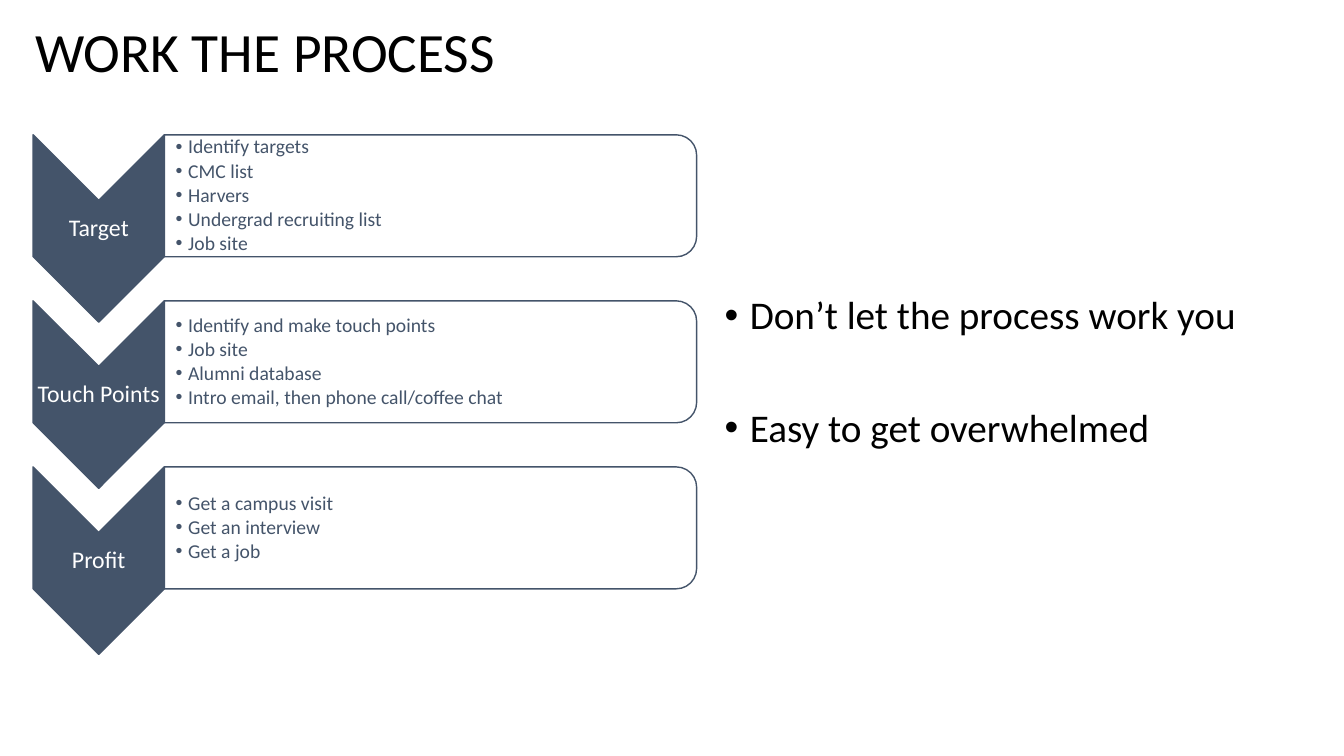
import lxml.etree
import pptx
import pptx.dml.color
import pptx.enum.shapes
import pptx.enum.text
import pptx.oxml.ns
import pptx.util

Pt = pptx.util.Pt
SHAPE = pptx.enum.shapes.MSO_SHAPE
ALIGN = pptx.enum.text.PP_ALIGN
SLATE, WHITE, BLACK = "44546A", "FFFFFF", "000000"
TOP, STEP = 96.3, 118.6

STEPS = [
    ("Target", ["Identify targets", "CMC list", "Harvers",
                "Undergrad recruiting list", "Job site"]),
    ("Touch Points", ["Identify and make touch points", "Job site", "Alumni database",
                      "Intro email, then phone call/coffee chat"]),
    ("Profit", ["Get a campus visit", "Get an interview", "Get a job"]),
]


def set_color(fmt, color):
    fmt.rgb = pptx.dml.color.RGBColor.from_string(color)


def add_bullet(p, indent):
    pPr = p._p.get_or_add_pPr()
    pPr.set("marL", str(Pt(indent)))
    pPr.set("indent", str(-Pt(indent)))
    for tag, name, value in (("buFont", "typeface", "Arial"), ("buChar", "char", "•")):
        lxml.etree.SubElement(pPr, pptx.oxml.ns.qn("a:" + tag)).set(name, value)


def write(tf, lines, size, color, indent=0, insets=(7.2, 3.6, 7.2, 3.6), **spacing):
    """Fill a text frame with one paragraph per line, bulleted if indented."""
    sides = ("margin_left", "margin_top", "margin_right", "margin_bottom")
    frame = dict(zip(sides, map(Pt, insets)), word_wrap=True,
                 auto_size=pptx.enum.text.MSO_AUTO_SIZE.NONE,
                 vertical_anchor=pptx.enum.text.MSO_ANCHOR.MIDDLE)
    for name, value in frame.items():
        setattr(tf, name, value)
    for i, line in enumerate(lines):
        p = tf.paragraphs[0] if i == 0 else tf.add_paragraph()
        for name, value in dict({"alignment": ALIGN.LEFT, "line_spacing": 0.9}, **spacing).items():
            setattr(p, name, value)
        if indent:
            add_bullet(p, indent)
        r = p.add_run()
        r.text = line
        for name, value in {"size": Pt(size), "name": "Calibri"}.items():
            setattr(r.font, name, value)
        set_color(r.font.color, color)


def add_text(s, box, lines, size, color, **options):
    write(s.shapes.add_textbox(*map(Pt, box)).text_frame, lines, size, color, **options)


def add_turned_shape(s, kind, box, fill):
    """Add a shape turned by 90 degrees that covers the given box."""
    x, y, w, h = box
    sp = s.shapes.add_shape(kind, Pt(x + (w - h) / 2), Pt(y + (h - w) / 2), Pt(h), Pt(w))
    sp.rotation = 90
    sp.shadow.inherit = False
    sp.fill.solid()
    set_color(sp.fill.fore_color, fill)
    set_color(sp.line.color, SLATE)
    sp.line.width = Pt(1)


def add_step(s, y, label, items):
    add_turned_shape(s, SHAPE.CHEVRON, (23.6, y, 93.8, 133.9), SLATE)
    add_text(s, (23.6, y + 46.9, 93.8, 40.2), [label], 17, WHITE,
             insets=(0.8,) * 4, alignment=ALIGN.CENTER)
    add_turned_shape(s, SHAPE.ROUND_2_SAME_RECTANGLE, (117.4, y, 380.2, 87.1), WHITE)
    add_text(s, (117.4, y + 4.3, 376, 78.5), items, 14, SLATE, indent=9,
             insets=(8, 0.8, 0.8, 0.8), space_after=Pt(2.1))


def add_title(s, text):
    sp = s.shapes.title
    box = {"left": 18, "top": 12, "width": 847.5, "height": 54}
    for name, value in box.items():
        setattr(sp, name, Pt(value))
    write(sp.text_frame, [text], 39.6, BLACK)


def main():
    prs = pptx.Presentation()
    prs.slide_width, prs.slide_height = Pt(960), Pt(540)
    s = prs.slides.add_slide(prs.slide_layouts[5])
    add_title(s, "WORK THE PROCESS")
    add_text(s, (510.5, 84.2, 437.8, 365),
             ["Don’t let the process work you", "Easy to get overwhelmed"],
             28, BLACK, indent=18, space_before=Pt(50))
    for i, (label, items) in enumerate(STEPS):
        add_step(s, TOP + i * STEP, label, items)
    prs.save("out.pptx")


if __name__ == "__main__":
    main()
